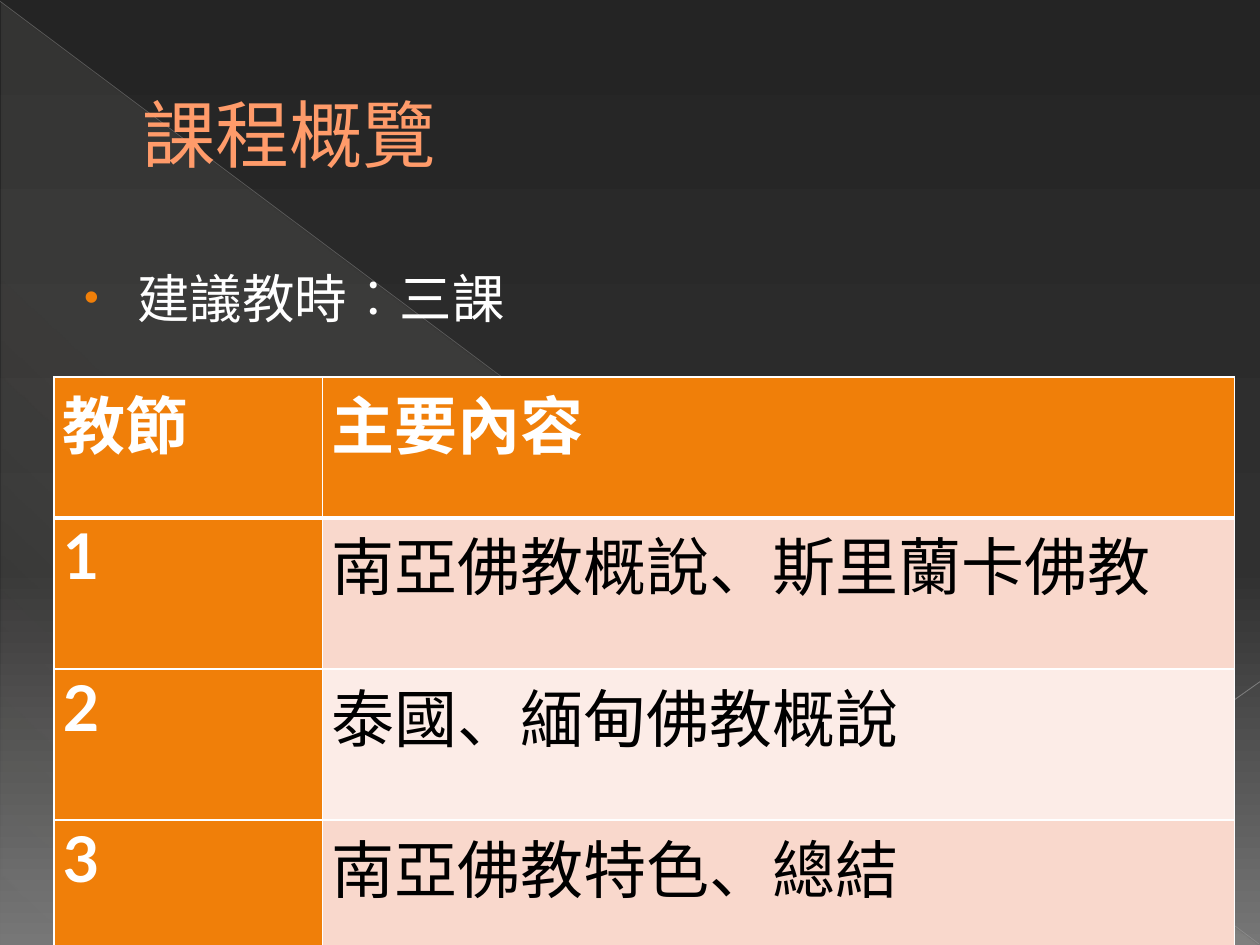
from lxml import etree
from pptx import Presentation
from pptx.dml.color import RGBColor
from pptx.enum.shapes import MSO_CONNECTOR, MSO_SHAPE
from pptx.enum.text import MSO_ANCHOR, MSO_AUTO_SIZE, PP_ALIGN
from pptx.oxml.ns import qn
from pptx.util import Inches, Pt

RIGHT_TRIANGLE = MSO_SHAPE.RIGHT_TRIANGLE
STRAIGHT = MSO_CONNECTOR.STRAIGHT
MIDDLE, TOP = MSO_ANCHOR.MIDDLE, MSO_ANCHOR.TOP
NO_AUTOFIT = MSO_AUTO_SIZE.NONE
LEFT = PP_ALIGN.LEFT

FONT = "Lato"
WHITE = RGBColor(0xFF, 0xFF, 0xFF)
BLACK = RGBColor(0, 0, 0)
ORANGE = RGBColor(0xF0, 0x7F, 0x09)
SALMON = RGBColor(0xFF, 0x9B, 0x6A)
BROWN = RGBColor(0xA6, 0x58, 0x06)
PINK = RGBColor(0xF9, 0xD8, 0xCC)
PALE_PINK = RGBColor(0xFC, 0xEC, 0xE7)
CREAM = RGBColor(0xE3, 0xDE, 0xD1)
GREY = RGBColor(0xB6, 0xB6, 0xB6)
LIGHT_GREY = RGBColor(0xBF, 0xBF, 0xBF)
BACKDROP = [(0, RGBColor(0x24, 0x24, 0x24), 100),
            (60, RGBColor(0x30, 0x30, 0x30), 100),
            (100, RGBColor(0x76, 0x76, 0x76), 100)]
GLOW = [(0, CREAM, 10), (70, CREAM, 8), (100, CREAM, 1)]

COLUMNS, ROWS = 100, 75
ROWS_OF_TEXT = [("教節", "主要內容"),
                ("1", "南亞佛教概說、斯里蘭卡佛教"),
                ("2", "泰國、緬甸佛教概說"),
                ("3", "南亞佛教特色、總結")]


def add(parent, tag, **attrs):
    child = etree.SubElement(parent, qn(tag))
    for name, value in attrs.items():
        child.set(name, str(value))
    return child


def add_color(parent, color, opacity=100):
    clr = add(parent, "a:srgbClr", val=color)
    if opacity < 100:
        add(clr, "a:alpha", val=opacity * 1000)


class Deck:
    """Style and current slide; lengths are columns and rows of the grid."""

    def __init__(self):
        self.prs = Presentation()
        self.prs.slide_width, self.prs.slide_height = Inches(10), Inches(7.5)
        self.s = self.prs.slides.add_slide(self.prs.slide_layouts[5])

    def x(self, columns):
        return round(self.prs.slide_width * columns / COLUMNS)

    def y(self, rows):
        return round(self.prs.slide_height * rows / ROWS)

    def box(self, left, top, width, height):
        return self.x(left), self.y(top), self.x(width), self.y(height)

    def gradient(self, fill, parent, stops, angle):
        fill.solid()
        grad = etree.Element(qn("a:gradFill"), rotWithShape="1")
        gs_list = add(grad, "a:gsLst")
        for pos, color, opacity in stops:
            add_color(add(gs_list, "a:gs", pos=pos * 1000), color, opacity)
        add(grad, "a:lin", ang=angle * 60000, scaled=0)
        solid = next(parent.iter(qn("a:solidFill")))
        solid.getparent().replace(solid, grad)

    def background(self, stops, angle):
        self.gradient(self.s.background.fill, self.s.element, stops, angle)

    def triangle(self, box, stops, angle):
        sp = self.s.shapes.add_shape(RIGHT_TRIANGLE, *self.box(*box))
        sp.shadow.inherit = False
        sp.line.fill.background()
        self.gradient(sp.fill, sp.element.spPr, stops, angle)

    def line(self, start, end, color, width, opacity):
        c = self.s.shapes.add_connector(
            STRAIGHT, self.x(start[0]), self.y(start[1]), self.x(end[0]), self.y(end[1]))
        c.line.color.rgb = color
        c.line.width = Pt(width)
        clr = next(c.element.spPr.iter(qn("a:srgbClr")))
        add(clr, "a:alpha", val=opacity * 1000)
        add(c.element.spPr, "a:effectLst")

    def put_text(self, tf, text, size, color, bold=False):
        p = tf.paragraphs[0]
        p.text = text
        p.alignment = LEFT
        p.font.name, p.font.size = FONT, Pt(size)
        p.font.bold, p.font.color.rgb = bold, color
        return p

    def frame(self, sp, anchor):
        tf = sp.text_frame
        tf.word_wrap, tf.auto_size, tf.vertical_anchor = True, NO_AUTOFIT, anchor
        return tf

    def title(self, box, text, size, color, outline, indent):
        sp = self.s.shapes.title
        sp.left, sp.top, sp.width, sp.height = self.box(*box)
        p = self.put_text(self.frame(sp, MIDDLE), text, size, color)
        pPr = p._p.get_or_add_pPr()
        pPr.set("marL", str(self.x(indent)))
        ln = etree.Element(qn("a:ln"), w=str(Pt(0.5)))
        add_color(add(ln, "a:solidFill"), outline)
        pPr.find(qn("a:defRPr")).insert(0, ln)
        # Bring the title in front of the decoration
        self.s.shapes._spTree.append(sp.element)

    def bullet(self, box, text, size, color, bullet_color, indent, hanging):
        sp = self.s.shapes.add_textbox(*self.box(*box))
        p = self.put_text(self.frame(sp, TOP), text, size, color)
        p.space_before = Pt(size * 0.2)
        pPr = p._p.get_or_add_pPr()
        pPr.set("marL", str(self.x(indent)))
        pPr.set("indent", str(-self.x(hanging)))
        marks = etree.Element(qn("a:pPr"))
        add_color(add(marks, "a:buClr"), bullet_color)
        add(marks, "a:buSzPct", val=80000)
        add(marks, "a:buFont", typeface="Arial")
        add(marks, "a:buChar", char="•")
        for mark in list(marks):
            pPr.find(qn("a:defRPr")).addprevious(mark)

    def borders(self, cell, color, widths):
        tcPr = cell._tc.get_or_add_tcPr()
        for i, (side, width) in enumerate(zip("LRTB", widths)):
            ln = etree.Element(qn(f"a:ln{side}"), w=str(Pt(width)))
            add_color(add(ln, "a:solidFill"), color)
            tcPr.insert(i, ln)

    def table(self, left, top, widths, heights, rows, size):
        box = self.box(left, top, sum(widths), sum(heights))
        table = self.s.shapes.add_table(len(rows), len(widths), *box).table
        for column, width in zip(table.columns, widths):
            column.width = self.x(width)
        for i, (row, height, texts) in enumerate(zip(table.rows, heights, rows)):
            row.height = self.y(height)
            for j, (cell, text) in enumerate(zip(row.cells, texts)):
                heading = i == 0 or j == 0
                cell.margin_left = cell.margin_right = self.x(0.7)
                cell.margin_top = cell.margin_bottom = 0
                self.put_text(cell.text_frame, text, size, WHITE if heading else BLACK, heading)
                cell.fill.solid()
                cell.fill.fore_color.rgb = ORANGE if heading else PINK if i % 2 else PALE_PINK
                self.borders(cell, WHITE, (1, 1, 3 if i == 1 else 1, 3 if i == 0 else 1))


def main():
    deck = Deck()

    # Backdrop
    deck.background(BACKDROP, 90)
    deck.triangle((0.1, 0.2, 99.8, 74.8), GLOW, 133)
    deck.line((0, 0.1), (99.9, 74.9), GREY, 0.39, 35)
    deck.line((100, 54.1), (70.7, 74.9), LIGHT_GREY, 0.47, 45)

    # Title and teaching time
    deck.title((5, 2.9, 90, 15.3), "課程概覽", 42, SALMON, BROWN, 5.3)
    deck.bullet((5, 20.6, 90, 50), "建議教時︰三課", 30, WHITE, ORANGE, 4.9, 4.2)

    # Lesson table
    deck.table(4.3, 29.9, (21.3, 72.4), (11.2, 12, 12, 12), ROWS_OF_TEXT, 36)

    deck.prs.save("out.pptx")


if __name__ == "__main__":
    main()
